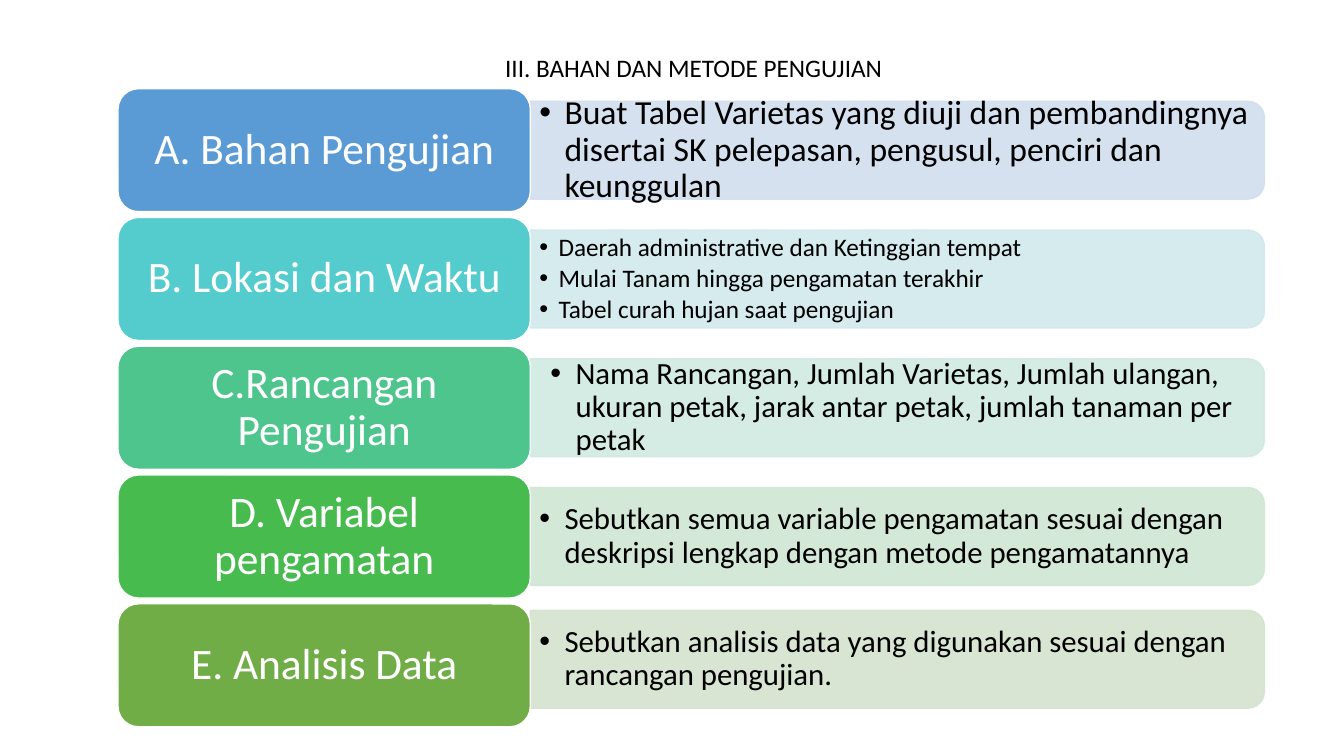
"""Build the slide on test materials and methods."""
from dataclasses import dataclass

from lxml.etree import SubElement
from pptx import Presentation
from pptx.dml.color import RGBColor
from pptx.enum.shapes import MSO_SHAPE
from pptx.enum.text import MSO_ANCHOR, PP_ALIGN
from pptx.oxml.ns import qn
from pptx.util import Inches, Pt

WIDTH, HEIGHT = 13.33, 7.5
LEFT, SEAM, RIGHT = 1.17, 5.26, 12.54
TOP, LAST = 0.88, 5.99
CARD, BAND, LIST = 1.22, 0.97, 0.88


@dataclass(frozen=True)
class Row:
    """One step: its card, its band and its list."""
    name: str
    fill: str
    tint: str
    items: tuple[str, ...]
    size: float = 22
    hang: float = 0.25
    pad: tuple[float, float] = (0.09, 0.05)
    shift: float = 0


ROWS = (
    Row("A. Bahan Pengujian", "5B9BD5", "D2DEEF",
        ("Buat Tabel Varietas yang diuji dan pembandingnya disertai SK pelepasan, "
         "pengusul, penciri dan keunggulan",), size=24),
    Row("B. Lokasi dan Waktu", "54CCCD", "D1E9ED",
        ("Daerah administrative dan Ketinggian tempat",
         "Mulai Tanam hingga pengamatan terakhir",
         "Tabel curah hujan saat pengujian"), size=18, hang=0.19),
    Row("C.Rancangan Pengujian", "4DC58D", "D0EAE1",
        ("Nama Rancangan, Jumlah Varietas, Jumlah ulangan, ukuran petak, "
         "jarak antar petak, jumlah tanaman per petak",), pad=(0.2, 0.1)),
    Row("D. Variabel pengamatan", "48BB4F", "D0E6D4",
        ("Sebutkan semua variable pengamatan sesuai dengan deskripsi lengkap "
         "dengan metode pengamatannya",)),
    Row("E. Analisis Data", "70AD47", "D5E3CF",
        ("Sebutkan analisis data yang digunakan sesuai dengan rancangan pengujian.",),
        shift=-0.06),
)


def box(x: float, y: float, w: float, h: float) -> tuple:
    """Turn inches into a position and size."""
    return tuple(Inches(n) for n in (x, y, w, h))


def paint(part, tone: str, share: int = 100) -> None:
    """Give a fill or line a solid colour with an opacity in percent."""
    if hasattr(part, "solid"):
        part.solid()
        color = part.fore_color
    else:
        color = part.color
    color.rgb = RGBColor.from_string(tone)
    if share < 100:
        for node in part._xPr.iter(qn("a:srgbClr")) if hasattr(part, "_xPr") \
                else part._ln.iter(qn("a:srgbClr")):
            SubElement(node, qn("a:alpha"), val=str(share * 1000))


def write(shape, *lines: str, size: float, tone: str = "000000", align=PP_ALIGN.LEFT,
          anchor=MSO_ANCHOR.MIDDLE, pad: tuple[float, float] = (0.1, 0.05),
          space: float = 1, after: float = 0, hang: float = 0) -> None:
    """Write formatted paragraphs, with hanging bullets if asked."""
    frame = shape.text_frame
    frame.word_wrap = True
    frame.vertical_anchor = anchor
    frame.margin_left = frame.margin_right = Inches(pad[0])
    frame.margin_top = frame.margin_bottom = Inches(pad[1])
    frame.text = "\n".join(lines)
    for para in frame.paragraphs:
        para.alignment = align
        para.line_spacing = space
        para.space_before = Pt(0)
        para.space_after = Pt(size * after)
        font = para.runs[0].font
        font.name, font.size = "Calibri", Pt(size)
        font.color.rgb = RGBColor.from_string(tone)
        if hang:
            para.level = 1
            props = para._p.get_or_add_pPr()
            props.set("marL", str(Inches(hang)))
            props.set("indent", str(-Inches(hang)))
            SubElement(props, qn("a:buFont"), typeface="Arial")
            SubElement(props, qn("a:buChar"), char="•")


def block(slide, kind, place: tuple, fill: str, line: str, share: int = 100):
    """Add a flat shape with a thin line."""
    shape = slide.shapes.add_shape(kind, *place)
    shape.shadow.inherit = False
    paint(shape.fill, fill)
    paint(shape.line, line)
    shape.line.width = Pt(1)
    if share < 100:
        for node in shape._element.spPr.iter(qn("a:srgbClr")):
            SubElement(node, qn("a:alpha"), val=str(share * 1000))
    return shape


def draw(slide, row: Row, top: float) -> None:
    """Draw one row: band, list and card."""
    mid = top + CARD / 2 + row.shift
    span = RIGHT - SEAM
    band = block(slide, MSO_SHAPE.ROUND_2_SAME_RECTANGLE,
                 box((SEAM + RIGHT - BAND) / 2, mid - span / 2, BAND, span),
                 row.tint, row.tint, share=90)
    band.rotation = 90
    area = slide.shapes.add_textbox(*box(SEAM, mid - LIST / 2, span - 0.05, LIST))
    write(area, *row.items, size=row.size, pad=row.pad, space=0.9, after=0.15,
          hang=row.hang)
    card = block(slide, MSO_SHAPE.ROUNDED_RECTANGLE,
                 box(LEFT, top, SEAM - LEFT, CARD), row.fill, "FFFFFF")
    write(card, row.name, size=31, tone="FFFFFF", align=PP_ALIGN.CENTER,
          pad=(0.13, 0.06), space=0.9)


def main() -> None:
    """Build and save the deck."""
    deck = Presentation()
    deck.slide_width, deck.slide_height = Inches(WIDTH), Inches(HEIGHT)
    slide = deck.slides.add_slide(deck.slide_layouts[5])
    title = slide.shapes.title
    title.left, title.top, title.width, title.height = box(4.91, 0.47, 6.67, 0.4)
    write(title, "III. BAHAN DAN METODE PENGUJIAN", size=18, anchor=MSO_ANCHOR.TOP)
    pitch = (LAST - TOP) / (len(ROWS) - 1)
    for i, row in enumerate(ROWS):
        draw(slide, row, TOP + i * pitch)
    deck.save("out.pptx")


if __name__ == "__main__":
    main()
